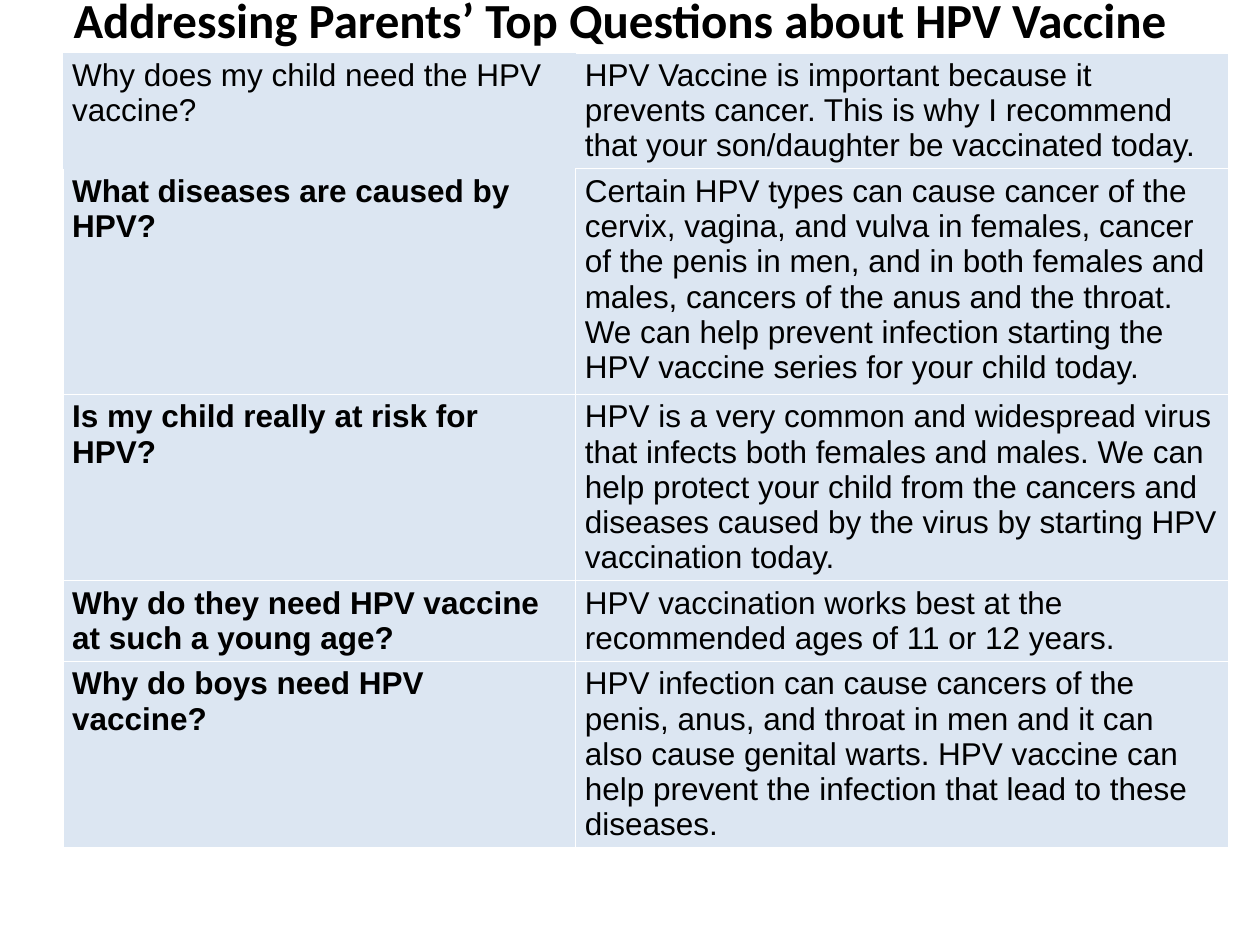
from typing import NamedTuple

from lxml.etree import SubElement
from pptx import Presentation
from pptx.dml.color import RGBColor
from pptx.enum.text import MSO_ANCHOR, PP_ALIGN
from pptx.oxml.ns import qn
from pptx.util import Pt


class Question(NamedTuple):
    question: str
    answer: str
    height: float
    bold: bool = True


QUESTIONS = [
    Question("Why does my child need the HPV vaccine?",
             "HPV Vaccine is important because it prevents cancer. This is why I "
             "recommend that your son/daughter be vaccinated today.", 66.2, False),
    Question("What diseases are caused by HPV?",
             "Certain HPV types can cause cancer of the cervix, vagina, and vulva in "
             "females, cancer of the penis in men, and in both females and males, "
             "cancers of the anus and the throat. We can help prevent infection "
             "starting the HPV vaccine series for your child today.", 128.9),
    Question("Is my child really at risk for HPV?",
             "HPV is a very common and widespread virus that infects both females and "
             "males. We can help protect your child from the cancers and diseases "
             "caused by the virus by starting HPV vaccination today.", 105.9),
    Question("Why do they need HPV vaccine at such a young age?",
             "HPV vaccination works best at the recommended ages of 11 or 12 years.",
             45.6),
    Question("Why do boys need HPV vaccine?",
             "HPV infection can cause cancers of the penis, anus, and throat in men "
             "and it can also cause genital warts. HPV vaccine can help prevent the "
             "infection that lead to these diseases.", 105.9),
]
COLUMN_WIDTHS = (293, 373)
CELL_FILL = "DCE6F2"
BORDER = "FFFFFF"
INK = "000000"


def color(value: str) -> RGBColor:
    return RGBColor.from_string(value)


def format_font(font, name: str, size: float, bold: bool) -> None:
    font.name, font.size, font.bold = name, Pt(size), bold
    font.color.rgb = color(INK)


def set_borders(cell, hidden: str) -> None:
    """Draw thin borders, except on the sides named in hidden."""
    properties = cell._tc.get_or_add_tcPr()
    for index, side in enumerate("LRTB"):
        line = properties.makeelement(qn(f"a:ln{side}"), {"w": str(Pt(1))})
        if side in hidden:
            SubElement(line, qn("a:noFill"))
        else:
            fill = SubElement(line, qn("a:solidFill"))
            SubElement(fill, qn("a:srgbClr"), val=BORDER)
        properties.insert(index, line)


def fill_cell(cell, text: str, bold: bool, hidden: str) -> None:
    cell.text = text
    cell.fill.solid()
    cell.fill.fore_color.rgb = color(CELL_FILL)
    cell.margin_left = cell.margin_right = Pt(5.2)
    cell.margin_top = cell.margin_bottom = Pt(2.88)
    format_font(cell.text_frame.paragraphs[0].font, "Arial", 18, bold)
    set_borders(cell, hidden)


def add_title(page, text: str) -> None:
    box = page.shapes.title
    box.left, box.top, box.width, box.height = Pt(23), Pt(-10), Pt(662.4), Pt(42)
    frame = box.text_frame
    frame.text = text
    frame.vertical_anchor = MSO_ANCHOR.MIDDLE
    para = frame.paragraphs[0]
    para.alignment = PP_ALIGN.CENTER
    format_font(para.font, "Calibri", 28, True)


def add_questions(page, questions: list[Question]) -> None:
    height = sum(item.height for item in questions)
    table = page.shapes.add_table(len(questions), 2, Pt(36), Pt(30.2),
                                  Pt(sum(COLUMN_WIDTHS)), Pt(height)).table
    table.first_row = table.horz_banding = False
    for column, width in zip(table.columns, COLUMN_WIDTHS):
        column.width = Pt(width)
    # The first question has no borders, so its neighbours hide the shared sides
    hidden_sides = {(0, 0): "LRTB", (0, 1): "L", (1, 0): "T"}
    for row, item in enumerate(questions):
        table.rows[row].height = Pt(item.height)
        for column, (text, bold) in enumerate([(item.question, item.bold),
                                               (item.answer, False)]):
            fill_cell(table.cell(row, column), text, bold,
                      hidden_sides.get((row, column), ""))


def main() -> None:
    deck = Presentation()
    deck.slide_width, deck.slide_height = Pt(720), Pt(540)
    page = deck.slides.add_slide(deck.slide_layouts[5])
    add_title(page, "Addressing Parents’ Top Questions about HPV Vaccine")
    add_questions(page, QUESTIONS)
    deck.save("out.pptx")


if __name__ == "__main__":
    main()
